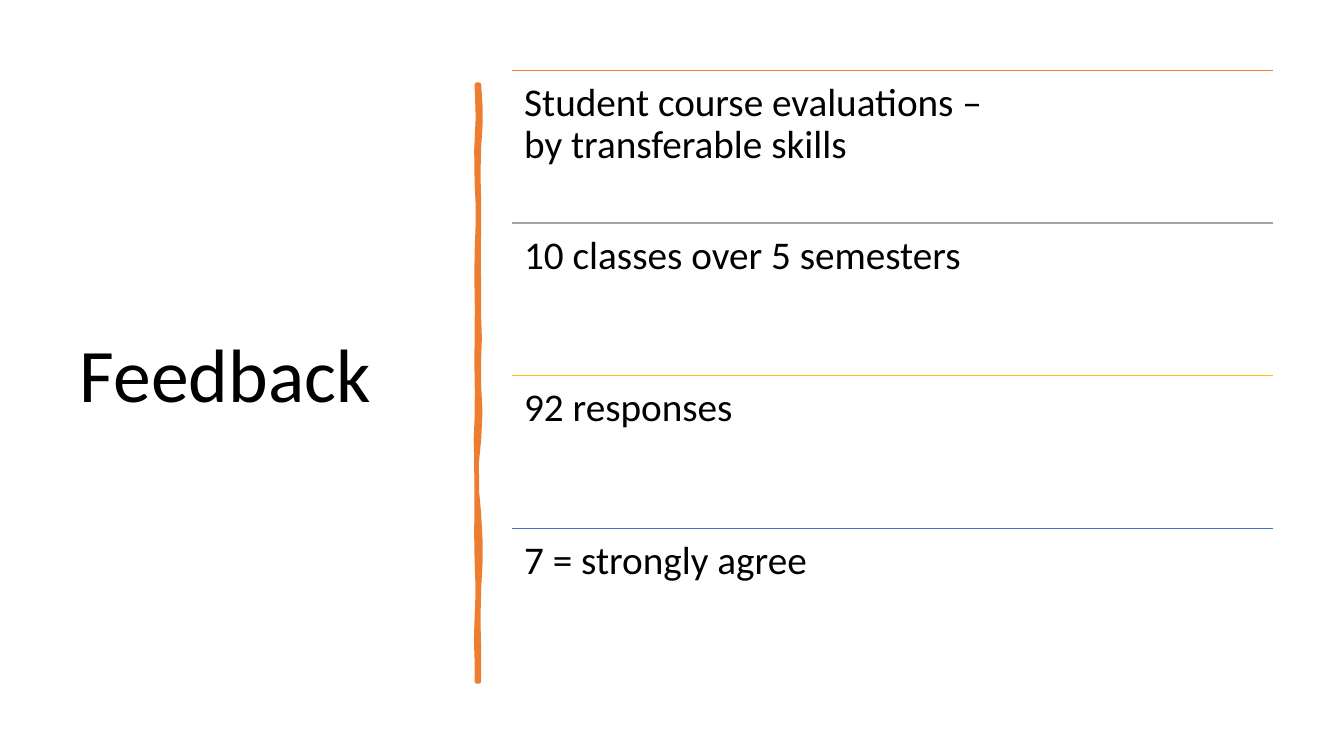
from pptx import Presentation as Deck
from pptx.dml.color import RGBColor as Color
from pptx.enum.shapes import MSO_CONNECTOR as Link
from pptx.enum.text import MSO_ANCHOR as Anchor
from pptx.oxml.ns import qn
from pptx.util import Inches as In, Pt
from lxml.etree import SubElement as Sub

WIDE, HIGH = 13.33, 7.5

THEME = {
    "font": "Calibri", "ink": "000000", "brush": "ED7D31",
    "title": 54, "body": 28, "rule": 1, "stroke": 3.25,
}

# Rows of the list: rule colour and wording
ROWS = [
    ("ED7D31", "Student course evaluations – \vby transferable skills"),
    ("A5A5A5", "10 classes over 5 semesters"),
    ("FFC000", "92 responses"),
    ("4472C4", "7 = strongly agree"),
]

# Grid of the list, in shares of the slide
LEFT, TOP = 0.381, 0.0933
SPAN, STEP = 0.5665, 0.2018

# Brush edges: end height and two sideways bends, in hundredths of an inch
NEAR, FAR, HEAD = 473, 475, 84
FALL = [(146, 2, 2), (226, -2, 1), (294, -1, 0), (356, -1, 2),
        (436, -2, 4), (510, -4, -3), (584, 2, 2), (676, -2, 1)]
RISE = [(613, 1, -2), (557, 1, 1), (477, -1, 0), (415, 0, -2),
        (335, 1, -1), (250, 1, -1), (181, 1, 2), (HEAD, -3, 4)]


def across(share):
    return In(WIDE * share)


def down(share):
    return In(HIGH * share)


def style(item, form):
    for name, value in form.items():
        setattr(item, name, value)


def add_text(slide, text, box, size, form):
    left, top, width, height = box
    frame = slide.shapes.add_textbox(
        across(left), down(top), across(width), down(height)).text_frame
    style(frame, {"word_wrap": True, "text": text, **form})
    para = frame.paragraphs[0]
    para.line_spacing = 0.9
    for run in para.runs:
        style(run.font, {"name": THEME["font"], "size": Pt(size)})
        run.font.color.rgb = Color.from_string(THEME["ink"])


def add_rule(slide, top, tint):
    rule = slide.shapes.add_connector(
        Link.STRAIGHT, across(LEFT), down(top), across(LEFT + SPAN), down(top))
    rule.line.width = Pt(THEME["rule"])
    rule.line.color.rgb = Color.from_string(tint)
    Sub(rule._element.spPr, qn("a:effectLst"))


def trace(side, start, bends, parts=3):
    """Points along one wavy edge, in thousandths of an inch."""
    points = []
    for end, one, two in bends:
        for k in range(1, parts + 1):
            t = k / parts
            sway = 3 * t * (1 - t) * ((1 - t) * one + t * two)
            points.append((10 * (side + sway), 10 * (start + t * (end - start))))
        start = end
    return points


def add_brush(slide):
    foot = FALL[-1][0]
    points = trace(FAR, HEAD, FALL) + [(10 * NEAR, 10 * foot)]
    points += trace(NEAR, foot, RISE)
    pen = slide.shapes.build_freeform(10 * FAR, 10 * HEAD, scale=In(1) / 1000)
    pen.add_line_segments(points, close=True)
    brush = pen.convert_to_shape()
    brush.shadow.inherit = False
    for paint in (brush.fill, brush.line.fill):
        paint.solid()
        paint.fore_color.rgb = Color.from_string(THEME["brush"])
    brush.line.width = Pt(THEME["stroke"])


def main():
    deck = Deck()
    style(deck, {"slide_width": In(WIDE), "slide_height": In(HIGH)})
    slide = deck.slides.add_slide(deck.slide_layouts[6])

    # Title
    add_text(slide, "Feedback", (0.052, TOP, 0.28, 0.8145), THEME["title"],
             {"vertical_anchor": Anchor.MIDDLE})

    # Brush stroke between title and list
    add_brush(slide)

    # Ruled list
    sides = ("left", "right", "top", "bottom")
    inset = {f"margin_{side}": In(0.12) for side in sides}
    for k, (tint, text) in enumerate(ROWS):
        top = TOP + k * STEP
        add_rule(slide, top, tint)
        add_text(slide, text, (LEFT, top, SPAN, STEP), THEME["body"], inset)

    deck.save("out.pptx")


if __name__ == "__main__":
    main()
